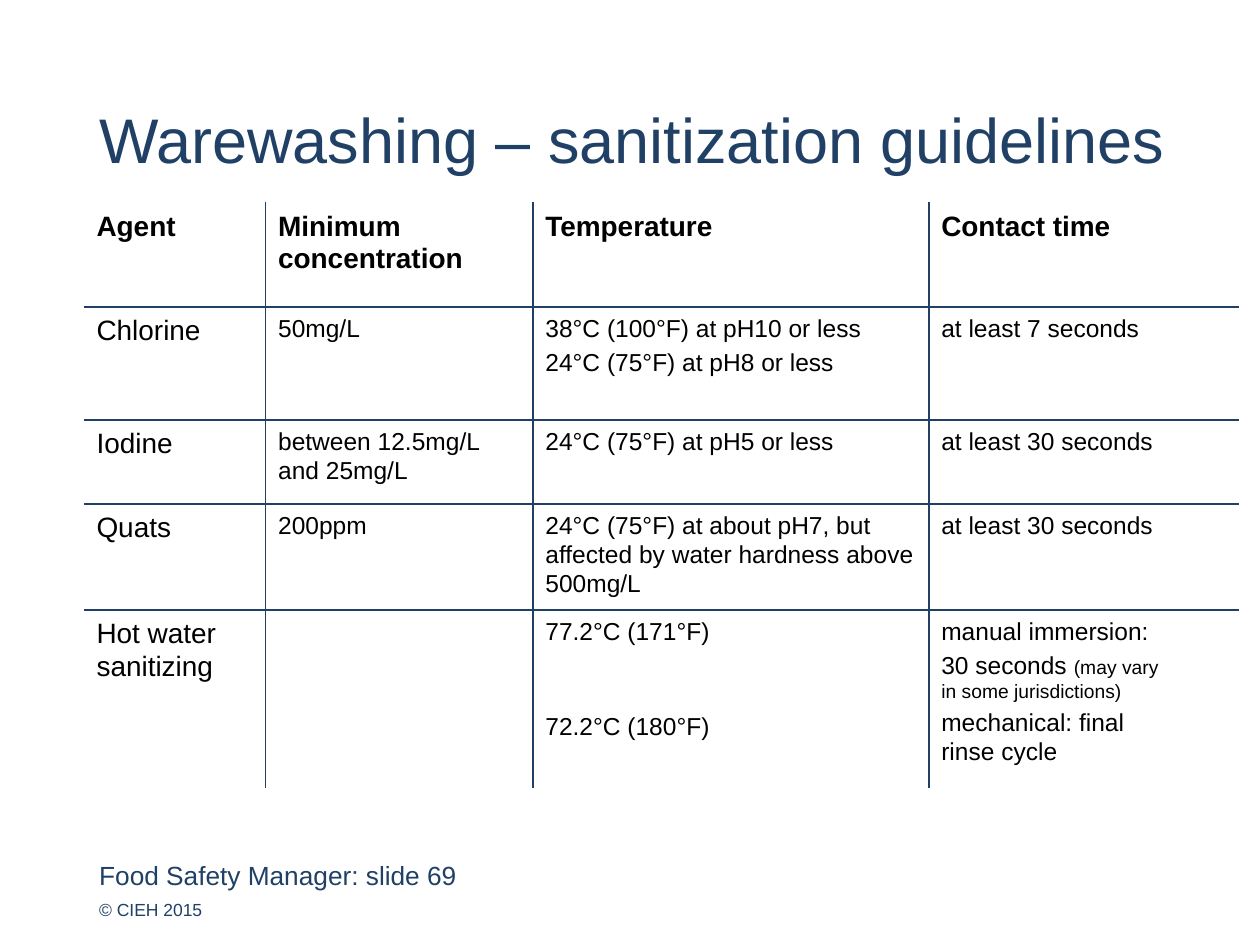
import itertools

import lxml.etree
import pptx
import pptx.dml.color
import pptx.enum.shapes
import pptx.enum.text
import pptx.oxml.ns
import pptx.util

Pt = pptx.util.Pt
COLORS = {"navy": "204066", "black": "000000"}
FONT = "Arial"
NO_GRID_STYLE = "{2D5ABB26-0587-4C30-8999-92F81FD0307C}"


def format_font(font, size, color, bold=False):
    font.name = FONT
    font.size = Pt(size)
    font.bold = bold
    font.color.rgb = pptx.dml.color.RGBColor.from_string(COLORS[color])


def fill_label(shape, text, size, top, width, height):
    shape.left, shape.top, shape.width, shape.height = Pt(56.7), Pt(top), Pt(width), Pt(height)
    frame = shape.text_frame
    frame.text = text
    frame.word_wrap = True
    frame.auto_size = pptx.enum.text.MSO_AUTO_SIZE.NONE
    frame.vertical_anchor = pptx.enum.text.MSO_ANCHOR.TOP
    frame.margin_left = frame.margin_right = frame.margin_top = frame.margin_bottom = 0
    paragraph = frame.paragraphs[0]
    paragraph.alignment = pptx.enum.text.PP_ALIGN.LEFT
    format_font(paragraph.runs[0].font, size, "navy")


presentation = pptx.Presentation()
presentation.slide_width = Pt(720)
presentation.slide_height = Pt(540)
slide = presentation.slides.add_slide(presentation.slide_layouts[5])

fill_label(slide.shapes.title, "Warewashing – sanitization guidelines", 36, 57.5, 642, 50)
footers = [
    ("Food Safety Manager: slide 69", 15, 491, 235, 18),
    ("© CIEH 2015", 10, 514, 76, 17),
]
for text, size, top, width, height in footers:
    fill_label(slide.shapes.add_textbox(0, 0, 0, 0), text, size, top, width, height)

rows = [
    ["Agent", "Minimum concentration", "Temperature", "Contact time"],
    ["Chlorine", "50mg/L", "38°C (100°F) at pH10 or less\n24°C (75°F) at pH8 or less", "at least 7 seconds"],
    ["Iodine", "between 12.5mg/L and 25mg/L", "24°C (75°F) at pH5 or less", "at least 30 seconds"],
    ["Quats", "200ppm", "24°C (75°F) at about pH7, but affected by water hardness above 500mg/L",
     "at least 30 seconds"],
    ["Hot water sanitizing", "", "77.2°C (171°F)\n72.2°C (180°F)",
     "manual immersion:\n30 seconds \nmechanical: final \vrinse cycle"],
]
column_widths = [103.75, 152.75, 226.25, 177]
row_heights = [60, 64.5, 48, 60.5, 102]
column_edges = list(itertools.accumulate(column_widths, initial=48))
row_edges = list(itertools.accumulate(row_heights, initial=115.4))
left, right = column_edges[0], column_edges[-1]
top, bottom = row_edges[0], row_edges[-1]

table_frame = slide.shapes.add_table(
    len(rows), len(column_widths), Pt(left), Pt(top), Pt(right - left), Pt(bottom - top)
)
table = table_frame.table
table.first_row = False
table.horz_banding = False
style = table_frame._element.find(".//" + pptx.oxml.ns.qn("a:tableStyleId"))
style.text = NO_GRID_STYLE
for column, width in zip(table.columns, column_widths):
    column.width = Pt(width)
for row, height in zip(table.rows, row_heights):
    row.height = Pt(height)

for row_index, texts in enumerate(rows):
    for column_index, text in enumerate(texts):
        cell = table.cell(row_index, column_index)
        cell.fill.background()
        cell.margin_top = Pt(4.2)
        cell.margin_bottom = Pt(3)
        cell.text_frame.text = text
        size = 16 if row_index == 0 or column_index == 0 else 14
        for index, paragraph in enumerate(cell.text_frame.paragraphs):
            paragraph.line_spacing = 1.05
            paragraph.space_before = Pt(3 if index else 0)
            format_font(paragraph.font, size, "black", row_index == 0)
            for run in paragraph.runs:
                format_font(run.font, size, "black", row_index == 0)

hot_water = len(rows) - 1
table.cell(hot_water, 2).text_frame.paragraphs[1].space_before = Pt(37.8)
note = table.cell(hot_water, 3).text_frame.paragraphs[1]
for index, text in enumerate(["(may vary ", "in some jurisdictions)"]):
    if index:
        note.add_line_break()
    run = note.add_run()
    run.text = text
    format_font(run.font, 11, "black")

grid_lines = [(x, top, x, bottom) for x in column_edges[1:-1]]
grid_lines += [(left, y, right, y) for y in row_edges[1:-1]]
for ends in grid_lines:
    connector = slide.shapes.add_connector(
        pptx.enum.shapes.MSO_CONNECTOR.STRAIGHT, *[Pt(value) for value in ends]
    )
    connector.line.width = Pt(1)
    connector.line.color.rgb = pptx.dml.color.RGBColor.from_string(COLORS["navy"])
    lxml.etree.SubElement(connector._element.spPr, pptx.oxml.ns.qn("a:effectLst"))

presentation.save("out.pptx")
